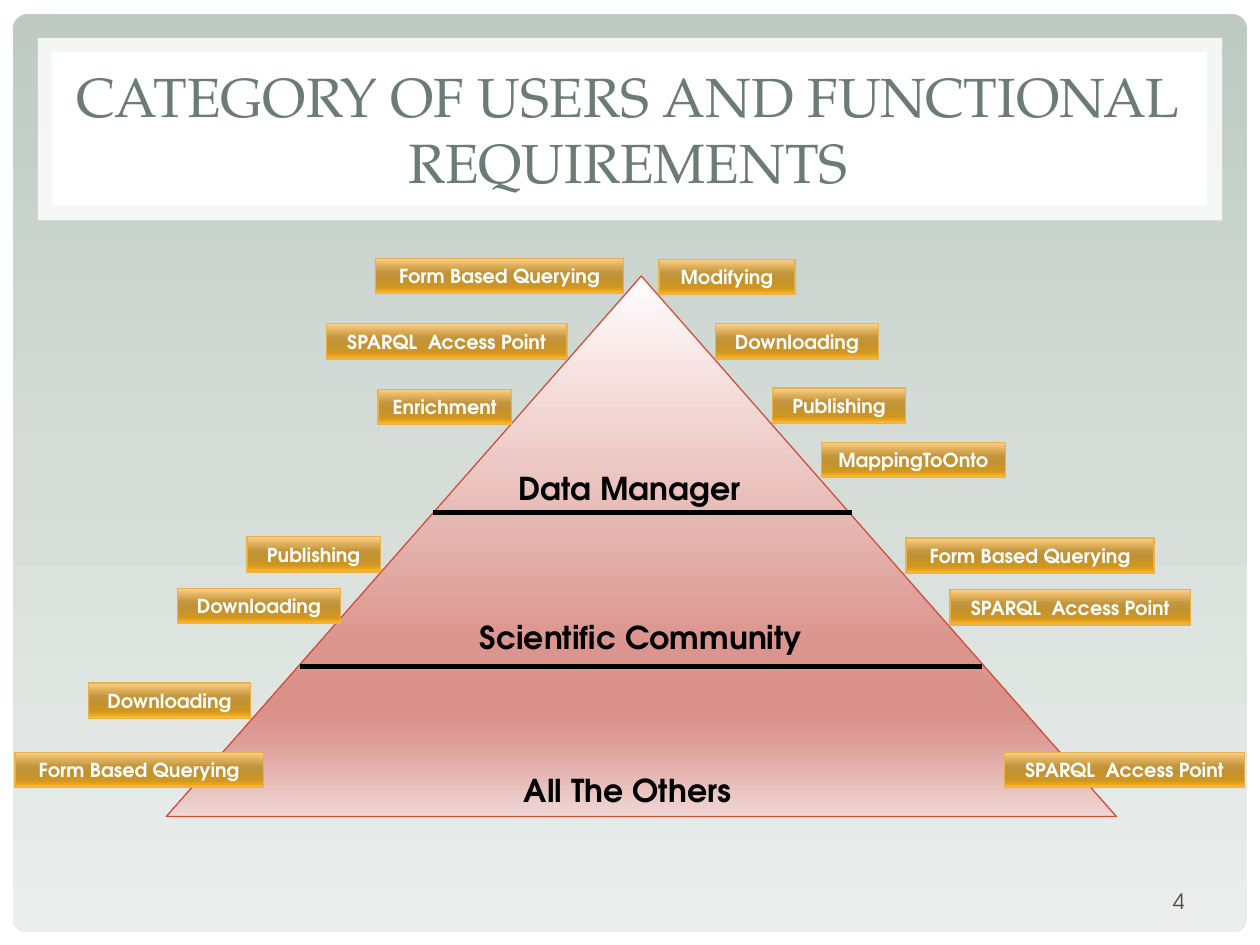
import pptx
import pptx.util
from pptx.dml.color import RGBColor
from pptx.enum.shapes import MSO_CONNECTOR, MSO_SHAPE
from pptx.enum.text import MSO_ANCHOR, PP_ALIGN
from pptx.oxml.ns import qn
from pptx.util import Inches
from lxml import etree

THEME = {
    "white": "FFFFFF",
    "pyramid_line": "CE503A",
    "tag_line": "E7B248",
    "divider": "000000",
    # Gradients run from top to bottom: (position in percent, colour)
    "backdrop": [(0, "BFCAC3"), (50, "D6DDD9"), (100, "EBEEEC")],
    "pyramid": [(0, "FFFEFE"), (68, "DB958E"), (81, "DA918A"), (86, "DD9D97"), (100, "F0D7D5")],
    "tag": [(0, "FFD08A"), (25, "D7A952"), (38, "C49640"), (55, "C29230"),
            (80, "CF9621"), (88, "E4A119"), (100, "FFBD3B")],
    "title_text": {"name": "TeX Gyre Pagella", "size": 31.5, "color": "6B7D72", "bold": False},
    "level_text": {"name": "TeX Gyre Adventor", "size": 18, "color": "000000", "bold": True},
    "tag_text": {"name": "TeX Gyre Adventor", "size": 11, "color": "FFFFFF", "bold": True},
    "number_text": {"name": "TeX Gyre Adventor", "size": 12, "color": "564B3C", "bold": False},
}

prs = pptx.Presentation()
prs.slide_width, prs.slide_height = Inches(10), Inches(7.5)
slide = prs.slides.add_slide(prs.slide_layouts[6])
slide.background.fill.solid()
slide.background.fill.fore_color.rgb = RGBColor.from_string(THEME["white"])


def add_panel(preset, box, fill, line=None):
    """Add a shape filled with one colour or with a list of gradient stops."""
    panel = slide.shapes.add_shape(preset, *map(Inches, box))
    panel.shadow.inherit = False
    if isinstance(fill, str):
        panel.fill.solid()
        panel.fill.fore_color.rgb = RGBColor.from_string(fill)
    else:
        panel.fill.gradient()
        panel.fill.gradient_angle = 270
        stops = panel._element.spPr.find(qn("a:gradFill")).find(qn("a:gsLst"))
        for old_stop in list(stops):
            stops.remove(old_stop)
        for position, color in fill:
            stop = etree.SubElement(stops, qn("a:gs"), pos=str(position * 1000))
            etree.SubElement(stop, qn("a:srgbClr"), val=color)
    if line:
        panel.line.color.rgb = RGBColor.from_string(line)
        panel.line.width = pptx.util.Pt(0.75)
    else:
        panel.line.fill.background()
    return panel


def write(holder, text, style, align, anchor=MSO_ANCHOR.MIDDLE, side=0.1, wrap=True):
    frame = holder.text_frame
    layout = {"word_wrap": wrap, "vertical_anchor": anchor,
              "margin_left": Inches(side), "margin_right": Inches(side)}
    for key, value in layout.items():
        setattr(frame, key, value)
    paragraph = frame.paragraphs[0]
    paragraph.alignment = align
    run = paragraph.add_run()
    run.text = text
    run.font.color.rgb = RGBColor.from_string(style["color"])
    font_format = {"name": style["name"], "size": pptx.util.Pt(style["size"]), "bold": style["bold"]}
    for key, value in font_format.items():
        setattr(run.font, key, value)


# Backdrop and title
backdrop = add_panel(MSO_SHAPE.ROUNDED_RECTANGLE, (0.1, 0.11, 9.8, 7.29), THEME["backdrop"])
backdrop.adjustments[0] = 0.017
title_border = add_panel(MSO_SHAPE.RECTANGLE, (0.3, 0.3, 9.4, 1.45), THEME["white"])
border_color = title_border._element.spPr.find(qn("a:solidFill"))[0]
etree.SubElement(border_color, qn("a:alpha"), val="83000")
add_panel(MSO_SHAPE.RECTANGLE, (0.41, 0.41, 9.17, 1.22), THEME["white"])
title = slide.shapes.add_textbox(Inches(0.47), Inches(0.45), Inches(9.03), Inches(1.14))
write(title, "CATEGORY OF USERS AND FUNCTIONAL REQUIREMENTS", THEME["title_text"],
      PP_ALIGN.CENTER, side=0.05)

# Pyramid with its dividers and levels
add_panel(MSO_SHAPE.ISOSCELES_TRIANGLE, (1.32, 2.19, 7.54, 4.29),
          THEME["pyramid"], THEME["pyramid_line"])

for left, right, y in [(2.38, 7.79, 5.29), (3.44, 6.76, 4.07)]:
    divider = slide.shapes.add_connector(
        MSO_CONNECTOR.STRAIGHT, Inches(left), Inches(y), Inches(right), Inches(y))
    divider.line.color.rgb = RGBColor.from_string(THEME["divider"])
    divider.line.width = pptx.util.Pt(3)
    etree.SubElement(divider._element.spPr, qn("a:effectLst"))

for level, left, top, width in [
    ("Data Manager", 4.02, 3.67, 2.08),
    ("Scientific Community", 3.71, 4.86, 3.32),
    ("All The Others", 4.06, 6.07, 3.32),
]:
    level_label = slide.shapes.add_textbox(Inches(left), Inches(top), Inches(width), Inches(0.4))
    write(level_label, level, THEME["level_text"], PP_ALIGN.LEFT, MSO_ANCHOR.TOP)

# Functional requirements: each one has its own tag width
TAG_HEIGHT = 0.28
tag_widths = {
    "SPARQL  Access Point": 1.91,
    "Form Based Querying": 1.97,
    "Enrichment": 1.06,
    "Publishing": 1.06,
    "Modifying": 1.08,
    "MappingToOnto": 1.46,
    "Downloading": 1.29,
}
requirements = [
    # Data Manager
    ("SPARQL  Access Point", 2.59, 2.57),
    ("Form Based Querying", 2.98, 2.05),
    ("Enrichment", 3, 3.09),
    ("Publishing", 6.13, 3.08),
    ("Modifying", 5.23, 2.06),
    ("MappingToOnto", 6.52, 3.51),
    ("Downloading", 5.68, 2.57),
    # Scientific Community
    ("Publishing", 1.96, 4.26),
    ("SPARQL  Access Point", 7.54, 4.68),
    ("Form Based Querying", 7.19, 4.27),
    ("Downloading", 1.41, 4.67),
    # All The Others
    ("SPARQL  Access Point", 7.97, 5.97),
    ("Form Based Querying", 0.12, 5.97),
    ("Downloading", 0.7, 5.42),
]
for requirement, left, top in requirements:
    tag = add_panel(MSO_SHAPE.RECTANGLE, (left, top, tag_widths[requirement], TAG_HEIGHT),
                    THEME["tag"], THEME["tag_line"])
    write(tag, requirement, THEME["tag_text"], PP_ALIGN.CENTER, side=0, wrap=False)

slide_number = slide.shapes.add_textbox(Inches(7.17), Inches(6.95), Inches(2.33), Inches(0.4))
write(slide_number, "4", THEME["number_text"], PP_ALIGN.RIGHT)

prs.save("out.pptx")
